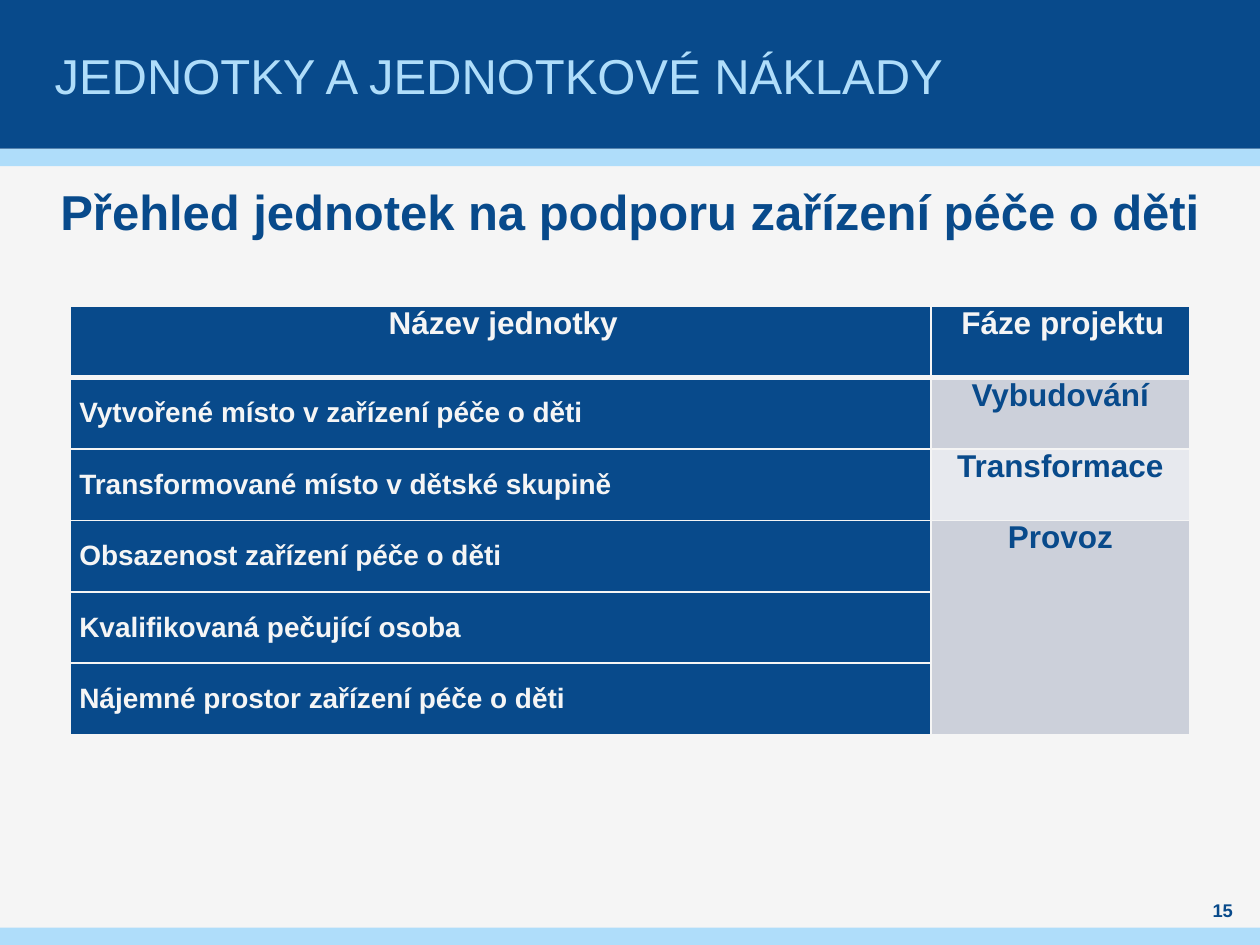
from dataclasses import dataclass

from lxml import etree
from pptx import Presentation
from pptx.dml.color import RGBColor
from pptx.enum.shapes import MSO_SHAPE
from pptx.enum.text import MSO_ANCHOR, MSO_AUTO_SIZE, PP_ALIGN
from pptx.oxml.ns import qn
from pptx.util import Cm, Pt

RECTANGLE = MSO_SHAPE.RECTANGLE
TOP, MIDDLE = MSO_ANCHOR.TOP, MSO_ANCHOR.MIDDLE
LEFT, CENTER = PP_ALIGN.LEFT, PP_ALIGN.CENTER


@dataclass(frozen=True)
class Theme:
    font: str = "Arial"
    navy: str = "084A8B"
    sky: str = "AFDDFA"
    paper: str = "F5F5F5"
    gray: str = "CCD0DA"
    pale: str = "E7E9EE"
    heading_size: float = 28
    phase_size: float = 18
    unit_size: float = 16
    number_size: float = 10.5


@dataclass(frozen=True)
class Box:
    """Position and size in centimetres."""
    left: float
    top: float
    width: float
    height: float

    def lengths(self) -> tuple:
        return Cm(self.left), Cm(self.top), Cm(self.width), Cm(self.height)


@dataclass(frozen=True)
class Band:
    top: float
    height: float
    color: str


@dataclass(frozen=True)
class TextStyle:
    size: float
    color: str
    bold: bool = True
    alignment: PP_ALIGN = CENTER


@dataclass(frozen=True)
class Phase:
    name: str
    fill: str
    units: tuple[str, ...]


THEME = Theme()
SLIDE_WIDTH, SLIDE_HEIGHT = 25.4, 19.05
HEADER_HEIGHT, STRIPE_HEIGHT = 3, 0.35
COLUMN_WIDTHS = (17.35, 5.21)
ROW_HEIGHT = 1.44

BANDS = (
    Band(HEADER_HEIGHT, STRIPE_HEIGHT, THEME.sky),
    Band(0, HEADER_HEIGHT, THEME.navy),
    Band(SLIDE_HEIGHT - STRIPE_HEIGHT, STRIPE_HEIGHT, THEME.sky),
)
TITLE = TextStyle(THEME.heading_size, THEME.sky, False, LEFT)
SUBTITLE = TextStyle(THEME.heading_size, THEME.navy)
PAGE_NUMBER = TextStyle(THEME.number_size, THEME.navy)
HEADER = TextStyle(THEME.phase_size, THEME.paper)
UNIT = TextStyle(THEME.unit_size, THEME.paper, True, LEFT)
PHASE = TextStyle(THEME.phase_size, THEME.navy)

HEADINGS = ("Název jednotky", "Fáze projektu")
PHASES = (
    Phase("Vybudování", THEME.gray, ("Vytvořené místo v zařízení péče o děti",)),
    Phase("Transformace", THEME.pale, ("Transformované místo v dětské skupině",)),
    Phase("Provoz", THEME.gray, (
        "Obsazenost zařízení péče o děti",
        "Kvalifikovaná pečující osoba",
        "Nájemné prostor zařízení péče o děti",
    )),
)


def set_fill(target, color: str) -> None:
    target.fill.solid()
    target.fill.fore_color.rgb = RGBColor.from_string(color)


def write_text(text_frame, text: str, style: TextStyle) -> None:
    text_frame.text = text
    paragraph = text_frame.paragraphs[0]
    paragraph.alignment = style.alignment
    for run in paragraph.runs:
        run.font.name = THEME.font
        run.font.size = Pt(style.size)
        run.font.bold = style.bold
        run.font.color.rgb = RGBColor.from_string(style.color)


def set_margins(target, horizontal: float, vertical: float = 0) -> None:
    target.margin_left = target.margin_right = Cm(horizontal)
    target.margin_top = target.margin_bottom = Cm(vertical)


def add_band(slide, band: Band) -> None:
    box = Box(0, band.top, SLIDE_WIDTH, band.height)
    shape = slide.shapes.add_shape(RECTANGLE, *box.lengths())
    shape.shadow.inherit = False
    set_fill(shape, band.color)
    shape.line.fill.background()


def place_title(slide, text: str, box: Box) -> None:
    title = slide.shapes.title
    title.left, title.top, title.width, title.height = box.lengths()
    text_frame = title.text_frame
    text_frame.auto_size = MSO_AUTO_SIZE.NONE
    text_frame.vertical_anchor = MIDDLE
    set_margins(text_frame, 0.1)
    write_text(text_frame, text, TITLE)
    # Bring the title in front of the bands
    slide.shapes._spTree.append(title._element)


def add_text(slide, text: str, box: Box, style: TextStyle):
    text_frame = slide.shapes.add_textbox(*box.lengths()).text_frame
    text_frame.word_wrap = True
    write_text(text_frame, text, style)
    return text_frame


def set_borders(cell, top: float = 1, bottom: float = 1) -> None:
    properties = cell._tc.get_or_add_tcPr()
    widths = {"a:lnL": 1, "a:lnR": 1, "a:lnT": top, "a:lnB": bottom}
    for index, (tag, width) in enumerate(widths.items()):
        line = etree.Element(qn(tag), w=str(Pt(width)))
        fill = etree.SubElement(line, qn("a:solidFill"))
        etree.SubElement(fill, qn("a:srgbClr"), val=THEME.paper)
        properties.insert(index, line)


def fill_cell(cell, text: str, style: TextStyle, color: str, anchor=TOP) -> None:
    set_fill(cell, color)
    set_margins(cell, 0.18)
    cell.vertical_anchor = anchor
    write_text(cell.text_frame, text, style)
    paragraph = cell.text_frame.paragraphs[0]
    paragraph.space_before = paragraph.space_after = Pt(3)


def add_unit_table(slide, left: float, top: float) -> None:
    row_count = 1 + sum(len(phase.units) for phase in PHASES)
    box = Box(left, top, sum(COLUMN_WIDTHS), ROW_HEIGHT * row_count)
    table = slide.shapes.add_table(row_count, len(HEADINGS), *box.lengths()).table
    for column, width in zip(table.columns, COLUMN_WIDTHS):
        column.width = Cm(width)
    for row in table.rows:
        row.height = Cm(ROW_HEIGHT)

    # Heavier rule between the header and the body
    for row_index, row in enumerate(table.rows):
        for cell in row.cells:
            set_borders(cell, 3 if row_index == 1 else 1, 3 if row_index == 0 else 1)

    for column_index, heading in enumerate(HEADINGS):
        cell = table.cell(0, column_index)
        fill_cell(cell, heading, HEADER, THEME.navy)
        cell.text_frame.paragraphs[0]._p.get_or_add_pPr().set("marL", str(Cm(0.1)))

    # One phase cell spans all of its units
    row_index = 1
    for phase in PHASES:
        last_row = row_index + len(phase.units) - 1
        phase_cell = table.cell(row_index, 1)
        if last_row > row_index:
            phase_cell.merge(table.cell(last_row, 1))
        fill_cell(phase_cell, phase.name, PHASE, phase.fill)
        for offset, unit in enumerate(phase.units):
            fill_cell(table.cell(row_index + offset, 0), unit, UNIT, THEME.navy, MIDDLE)
        row_index = last_row + 1


def main() -> None:
    presentation = Presentation()
    presentation.slide_width, presentation.slide_height = Cm(SLIDE_WIDTH), Cm(SLIDE_HEIGHT)
    slide = presentation.slides.add_slide(presentation.slide_layouts.get_by_name("Title Only"))
    set_fill(slide.background, THEME.paper)

    # Bands and title
    for band in BANDS:
        add_band(slide, band)
    place_title(slide, "JEDNOTKY A JEDNOTKOVÉ NÁKLADY", Box(1, 0, 23.4, HEADER_HEIGHT))

    # Page number
    number_frame = add_text(slide, "15", Box(24, 18.1, 1.3, 0.5), PAGE_NUMBER)
    set_margins(number_frame, 0)
    number_frame.vertical_anchor = MIDDLE

    # Subtitle and table
    add_text(slide, "Přehled jednotek na podporu zařízení péče o děti",
             Box(0.9, 3.53, 23.6, 1.45), SUBTITLE)
    add_unit_table(slide, 1.42, 6.17)
    presentation.save("out.pptx")


if __name__ == "__main__":
    main()
